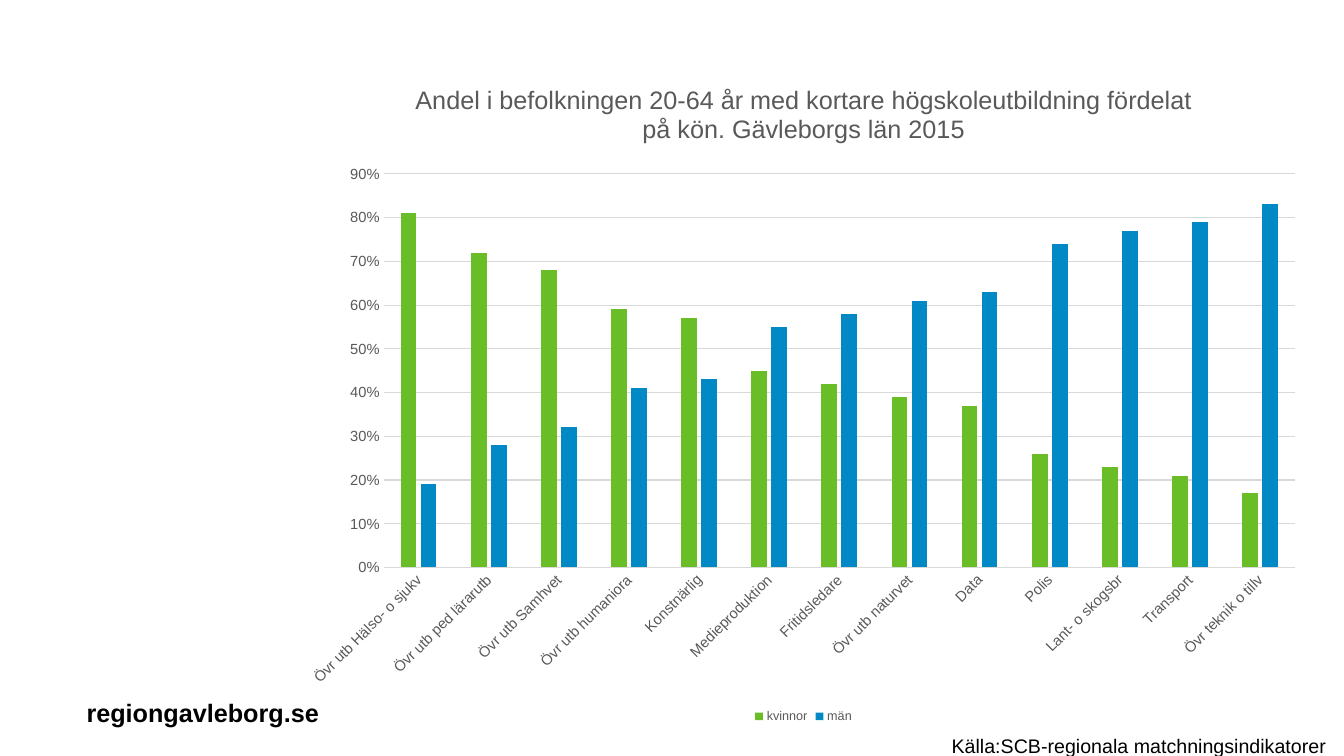
from lxml import etree
from pptx import Presentation
from pptx.chart.data import CategoryChartData
from pptx.dml.color import RGBColor
from pptx.enum import chart as ch, text as tx
from pptx.oxml import ns
from pptx.util import Inches, Pt

SIZE = (13.33, 7.5)
FONT = "Arial"
BLACK, GREY, RULE = "000000", "595959", "D9D9D9"
TITLE = ("Andel i befolkningen 20-64 år med kortare högskoleutbildning "
         "fördelat på kön. Gävleborgs län 2015")
ROWS = [
    ("Övr utb Hälso- o sjukv", 0.81, 0.19),
    ("Övr utb ped lärarutb", 0.72, 0.28),
    ("Övr utb Samhvet", 0.68, 0.32),
    ("Övr utb humaniora", 0.59, 0.41),
    ("Konstnärlig", 0.57, 0.43),
    ("Medieproduktion", 0.45, 0.55),
    ("Fritidsledare", 0.42, 0.58),
    ("Övr utb naturvet", 0.39, 0.61),
    ("Data", 0.37, 0.63),
    ("Polis", 0.26, 0.74),
    ("Lant- o skogsbr", 0.23, 0.77),
    ("Transport", 0.21, 0.79),
    ("Övr teknik o tillv", 0.17, 0.83),
]
SERIES = [("kvinnor", "69BE28"), ("män", "0089C4")]
CHART = (2.89, 0.6, 10.16, 6.62)
PLOT = {"x": 0.09, "y": 0.17, "w": 0.89, "h": 0.59}
LABELS = [
    ("regiongavleborg.se", (0.76, 6.87, 2.62, 0.4), 18, True, True),
    ("Källa:SCB-regionala matchningsindikatorer",
     (9.34, 7.23, 3.94, 0.34), 14, False, False),
]


def hue(code):
    return RGBColor.from_string(code)


def style(font, size, code, bold=False):
    font.name, font.size, font.bold = FONT, Pt(size), bold
    font.color.rgb = hue(code)


def rule(line):
    line.color.rgb = hue(RULE)
    line.width = Pt(0.75)


def place(area):
    old = area.find(ns.qn("c:layout"))
    if old is not None:
        area.remove(old)
    lay = etree.Element(ns.qn("c:layout"))
    man = etree.SubElement(lay, ns.qn("c:manualLayout"))
    parts = [("layoutTarget", "inner"), ("xMode", "edge"), ("yMode", "edge")]
    for tag, val in parts + list(PLOT.items()):
        etree.SubElement(man, ns.qn("c:" + tag)).set("val", str(val))
    area.insert(0, lay)


def draw(slide):
    data = CategoryChartData(number_format="0%")
    data.categories = [row[0] for row in ROWS]
    for i, (name, _) in enumerate(SERIES, 1):
        data.add_series(name, [row[i] for row in ROWS])
    chart = slide.shapes.add_chart(
        ch.XL_CHART_TYPE.COLUMN_CLUSTERED, *map(Inches, CHART), data).chart
    style(chart.font, 10, BLACK)

    chart.has_title = True
    run = chart.chart_title.text_frame.paragraphs[0].add_run()
    run.text = TITLE
    style(run.font, 18, GREY)
    chart.chart_title.include_in_layout = False

    chart.has_legend = True
    chart.legend.position = ch.XL_LEGEND_POSITION.BOTTOM
    chart.legend.include_in_layout = False
    style(chart.legend.font, 9, GREY)

    plot = chart.plots[0]
    plot.vary_by_categories = False
    plot.gap_width, plot.overlap = 219, -27
    for bars, (_, code) in zip(plot.series, SERIES):
        bars.format.fill.solid()
        bars.format.fill.fore_color.rgb = hue(code)

    cats, vals = chart.category_axis, chart.value_axis
    for axis in (cats, vals):
        axis.major_tick_mark = axis.minor_tick_mark = ch.XL_TICK_MARK.NONE
        style(axis.tick_labels.font, 10.5, GREY)
    body = cats.tick_labels.font._element.getparent().getparent().getparent()
    body.find(ns.qn("a:bodyPr")).set("rot", "-2700000")
    rule(cats.format.line)
    vals.format.line.fill.background()
    vals.has_major_gridlines = True
    rule(vals.major_gridlines.format.line)
    vals.minimum_scale, vals.maximum_scale, vals.major_unit = 0, 0.9, 0.1
    vals.tick_labels.number_format = "0%"
    vals.tick_labels.number_format_is_linked = False
    place(chart._chartSpace.chart.plotArea)


def label(slide, words, box, size, bold, wrap):
    frame = slide.shapes.add_textbox(*map(Inches, box)).text_frame
    frame.word_wrap = wrap
    frame.auto_size = tx.MSO_AUTO_SIZE.SHAPE_TO_FIT_TEXT
    run = frame.paragraphs[0].add_run()
    run.text = words
    style(run.font, size, BLACK, bold)


def main():
    deck = Presentation()
    deck.slide_width, deck.slide_height = map(Inches, SIZE)
    slide = deck.slides.add_slide(deck.slide_layouts[6])
    draw(slide)
    for item in LABELS:
        label(slide, *item)
    deck.save("out.pptx")


if __name__ == "__main__":
    main()
